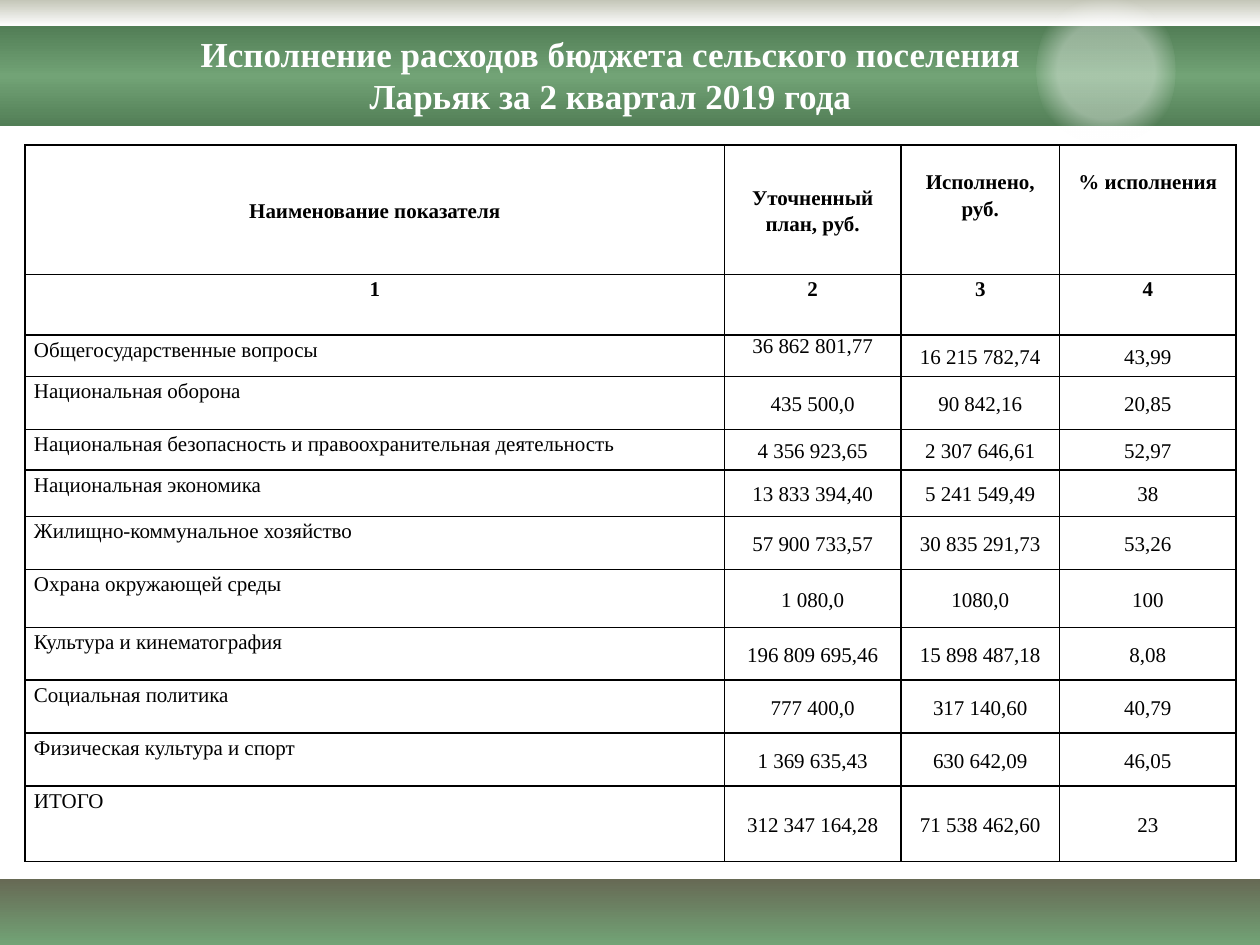
from lxml import etree
from pptx import Presentation
from pptx.dml.color import RGBColor
from pptx.enum import shapes, text
from pptx.oxml import ns
from pptx.util import Inches, Pt

FONT = "Times New Roman"
TITLE = "Исполнение расходов бюджета сельского поселения Ларьяк за 2 квартал 2019 года"
BANDS = [
    (6.98, 0.52, [(0, "676A55", 100), (100, "72A376", 100)]),
    (0, 0.21, [(0, "C4C6B8", 100), (100, "FFFFFF", 100)]),
    (0.21, 0.79, [(0, "527E56", 100), (50, "72A376", 100), (100, "527E56", 100)]),
]
GLOW = [(44, "FFFFFF", 38), (67, "FFFFFF", 0)]
COLUMNS = [5.55, 1.4, 1.26, 1.4]
ROWS = [
    (1.03, "Наименование показателя", "Уточненный план, руб.", "Исполнено,\nруб.", "% исполнения"),
    (0.48, "1", "2", "3", "4"),
    (0.33, "Общегосударственные вопросы", "36 862 801,77", "16 215 782,74", "43,99"),
    (0.42, "Национальная оборона", "435 500,0", "90 842,16", "20,85"),
    (0.32, "Национальная безопасность и правоохранительная деятельность",
     "4 356 923,65", "2 307 646,61", "52,97"),
    (0.37, "Национальная экономика", "13 833 394,40", "5 241 549,49", "38"),
    (0.42, "Жилищно-коммунальное хозяйство", "57 900 733,57", "30 835 291,73", "53,26"),
    (0.46, "Охрана окружающей среды", "1 080,0", "1080,0", "100"),
    (0.42, "Культура и кинематография", "196 809 695,46", "15 898 487,18", "8,08"),
    (0.42, "Социальная политика", "777 400,0", "317 140,60", "40,79"),
    (0.42, "Физическая культура и спорт", "1 369 635,43", "630 642,09", "46,05"),
    (0.6, "ИТОГО", "312 347 164,28", "71 538 462,60", "23"),
]
HEADER, NUMBERS, FIRST_ITEM = 0, 1, 2
TOP, MIDDLE = text.MSO_ANCHOR.TOP, text.MSO_ANCHOR.MIDDLE
LEFT, CENTER = text.PP_ALIGN.LEFT, text.PP_ALIGN.CENTER


def color(value):
    return RGBColor.from_string(value)


def add(parent, tag, **attributes):
    child = etree.SubElement(parent, ns.qn(tag))
    for name, value in attributes.items():
        child.set(name, str(value))
    return child


def add_gradient(page, kind, left, top, width, height, stops, radial=False):
    shape = page.shapes.add_shape(kind, *map(Inches, (left, top, width, height)))
    shape.shadow.inherit = False
    shape.line.fill.background()
    shape.fill.background()
    blank = shape.element.spPr.find(ns.qn("a:noFill"))
    fill = etree.Element(ns.qn("a:gradFill"), rotWithShape="1")
    blank.getparent().replace(blank, fill)
    stop_list = add(fill, "a:gsLst")
    for position, value, alpha in stops:
        stop = add(stop_list, "a:gs", pos=position * 1000)
        shade = add(stop, "a:srgbClr", val=value)
        if alpha < 100:
            add(shade, "a:alpha", val=alpha * 1000)
    if radial:
        circle = add(fill, "a:path", path="circle")
        add(circle, "a:fillToRect", l=50000, t=50000, r=50000, b=50000)
    else:
        add(fill, "a:lin", ang=5400000, scaled=0)


def write(frame, content, size=12, bold=False, ink="000000", align=CENTER, spacing=1.0):
    frame.word_wrap = True
    for index, line in enumerate(content.split("\n")):
        para = frame.add_paragraph() if index else frame.paragraphs[0]
        para.alignment = align
        para.line_spacing = spacing
        span = para.add_run()
        span.text = line
        span.font.name = FONT
        span.font.size = Pt(size)
        span.font.bold = bold
        span.font.color.rgb = color(ink)


def add_borders(cell):
    properties = cell._tc.get_or_add_tcPr()
    for index, side in enumerate(("a:lnL", "a:lnR", "a:lnT", "a:lnB")):
        line = etree.Element(ns.qn(side), w=str(Pt(1)))
        add(add(line, "a:solidFill"), "a:srgbClr", val="000000")
        properties.insert(index, line)


def add_budget_table(page):
    frame = page.shapes.add_table(len(ROWS), len(COLUMNS), Inches(0.2), Inches(1.15),
                                  Inches(sum(COLUMNS)), Inches(sum(row[0] for row in ROWS)))
    table = frame.table
    table.first_row = table.horz_banding = False
    for column, width in zip(table.columns, COLUMNS):
        column.width = Inches(width)
    for r, (height, *values) in enumerate(ROWS):
        table.rows[r].height = Inches(height)
        for c, value in enumerate(values):
            cell = table.cell(r, c)
            tight = (r, c) == (FIRST_ITEM, 1)
            lowered = r == HEADER and c >= 2
            centered = (r == HEADER and c < 2) or (r >= FIRST_ITEM and c > 0 and not tight)
            cell.margin_left = cell.margin_right = Inches(0.07)
            cell.margin_top = Inches(0.18 if lowered else 0)
            cell.margin_bottom = 0
            cell.vertical_anchor = MIDDLE if centered else TOP
            cell.fill.background()
            add_borders(cell)
            write(cell.text_frame, value, bold=r <= NUMBERS,
                  align=LEFT if r >= FIRST_ITEM and c == 0 else CENTER,
                  spacing=1.0 if tight else 1.15)


def main():
    deck = Presentation()
    deck.slide_width, deck.slide_height = Inches(10), Inches(7.5)
    page = deck.slides.add_slide(deck.slide_layouts[6])
    for top, height, stops in BANDS:
        add_gradient(page, shapes.MSO_SHAPE.RECTANGLE, 0, top, 10, height, stops)
    add_gradient(page, shapes.MSO_SHAPE.OVAL, 8.23, -0.11, 1.1, 1.34, GLOW, radial=True)
    add_budget_table(page)
    box = page.shapes.add_textbox(Inches(1.3), Inches(0.21), Inches(7.09), Inches(0.77))
    write(box.text_frame, TITLE, size=20, bold=True, ink="FFFFFF")
    deck.save("out.pptx")


if __name__ == "__main__":
    main()
